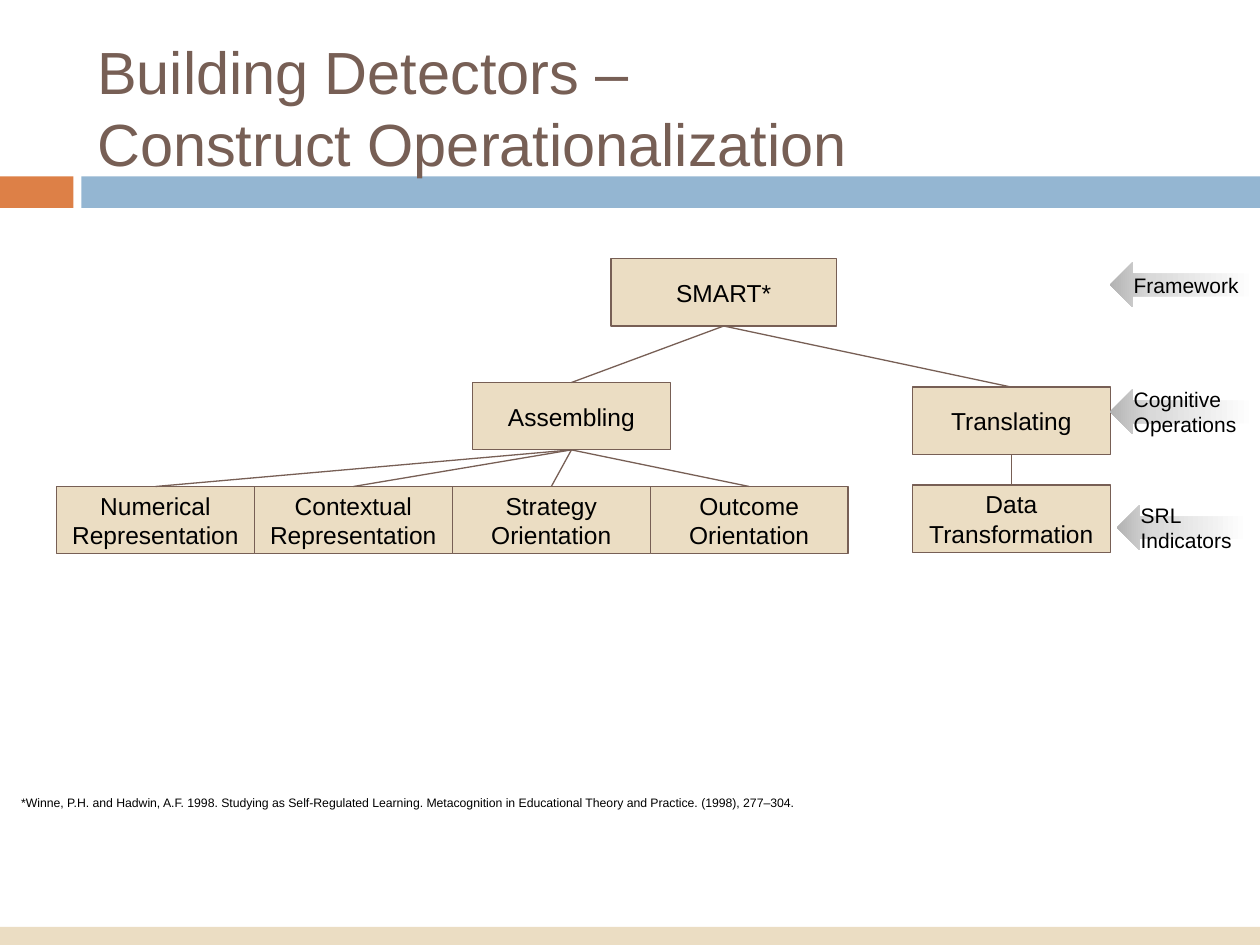
from copy import deepcopy

from lxml import etree
from pptx import Presentation
from pptx.dml.color import RGBColor
from pptx.enum.shapes import MSO_CONNECTOR, MSO_SHAPE
from pptx.enum.text import MSO_ANCHOR, PP_ALIGN
from pptx.oxml.ns import qn
from pptx.util import Pt

RECTANGLE, LEFT_ARROW = MSO_SHAPE.RECTANGLE, MSO_SHAPE.LEFT_ARROW
STRAIGHT = MSO_CONNECTOR.STRAIGHT
TOP, MIDDLE = MSO_ANCHOR.TOP, MSO_ANCHOR.MIDDLE
LEFT, CENTER = PP_ALIGN.LEFT, PP_ALIGN.CENTER

BLACK = RGBColor(0x00, 0x00, 0x00)
BROWN = RGBColor(0x77, 0x5F, 0x55)
SAND = RGBColor(0xEB, 0xDD, 0xC3)
ORANGE = RGBColor(0xDD, 0x80, 0x47)
BLUE = RGBColor(0x94, 0xB6, 0xD2)
ARROW_STOPS = [
    (0, RGBColor(0xFF, 0xFF, 0xFF)),
    (0.72, RGBColor(0xD9, 0xD9, 0xD9)),
    (1, RGBColor(0xB3, 0xB3, 0xB3)),
]
SITE_TOP, SITE_BOTTOM = 0, 2


def write_text(shape, text, size=14, color=BLACK, align=LEFT, anchor=MIDDLE,
               line_spacing=None, top_inset=7.2):
    frame = shape.text_frame
    frame.word_wrap = True
    frame.vertical_anchor = anchor
    frame.margin_left = frame.margin_right = frame.margin_bottom = Pt(7.2)
    frame.margin_top = Pt(top_inset)
    paragraph = frame.paragraphs[0]
    paragraph.text = text
    paragraph.alignment = align
    paragraph.line_spacing = line_spacing
    for run in paragraph.runs:
        run.font.name = "Arial"
        run.font.size = Pt(size)
        run.font.color.rgb = color


def add_block(kind, left, top, width, height, fill=None):
    """Add a shape without shadow or outline."""
    shape = slide.shapes.add_shape(kind, Pt(left), Pt(top), Pt(width), Pt(height))
    shape.shadow.inherit = False
    shape.line.fill.background()
    if fill is not None:
        shape.fill.solid()
        shape.fill.fore_color.rgb = fill
    return shape


presentation = Presentation()
presentation.slide_width, presentation.slide_height = Pt(720), Pt(540)
slide = presentation.slides.add_slide(presentation.slide_layouts[6])

# Bands
add_block(RECTANGLE, 0, 100.8, 42, 18, ORANGE)
add_block(RECTANGLE, 46.5, 100.8, 673.5, 18, BLUE)
add_block(RECTANGLE, 0, 529.7, 720, 10.3, SAND)

# Title and citation
title = slide.shapes.add_textbox(Pt(48.5), Pt(12.2), Pt(648), Pt(90))
write_text(title, "Building Detectors – \vConstruct Operationalization", size=34,
           color=BROWN, anchor=TOP, line_spacing=Pt(40.6), top_inset=8.3)
citation = slide.shapes.add_textbox(Pt(5), Pt(448.5), Pt(516), Pt(24.5))
write_text(citation, "*Winne, P.H. and Hadwin, A.F. 1998. Studying as Self-Regulated "
           "Learning. Metacognition in Educational Theory and Practice. (1998), 277–304.",
           size=7, anchor=TOP, line_spacing=1.15)

# Tree: text, left, top, width, parent
BOX_WIDTH, BOX_HEIGHT = 113.1, 38.5
ASSEMBLING_PARTS = ["Numerical Representation", "Contextual Representation",
                    "Strategy Orientation", "Outcome Orientation"]
nodes = [
    ("SMART*", 349.2, 147.8, 128.7, None),
    ("Assembling", 270, 218.6, BOX_WIDTH, "SMART*"),
    ("Translating", 521.4, 221.2, BOX_WIDTH, "SMART*"),
]
nodes += [(text, 32.3 + column * BOX_WIDTH, 278, BOX_WIDTH, "Assembling")
          for column, text in enumerate(ASSEMBLING_PARTS)]
nodes.append(("Data Transformation", 521.4, 277.2, BOX_WIDTH, "Translating"))

boxes = {}
for text, left, top, width, parent in nodes:
    box = add_block(RECTANGLE, left, top, width, BOX_HEIGHT, SAND)
    box.line.color.rgb = BROWN
    box.line.width = Pt(0.75)
    write_text(box, text, align=CENTER)
    boxes[text] = box

for text, left, top, width, parent in nodes:
    if parent is None:
        continue
    connector = slide.shapes.add_connector(STRAIGHT, 0, 0, 0, 0)
    connector.begin_connect(boxes[parent], SITE_BOTTOM)
    connector.end_connect(boxes[text], SITE_TOP)
    connector.line.color.rgb = BROWN
    connector.line.width = Pt(0.75)
    etree.SubElement(connector.element.spPr, qn("a:effectLst"))

# Level labels
for text, left, top, width in [
    ("Framework", 634.3, 149.9, 82.8),
    ("Cognitive Operations", 634.3, 222.5, 82.8),
    ("SRL Indicators", 638.3, 288.6, 74.9),
]:
    arrow = add_block(LEFT_ARROW, left, top, width, 25.8)
    arrow.fill.gradient()
    arrow.fill.gradient_angle = 180
    stop_list = arrow.element.spPr.find(qn("a:gradFill")).find(qn("a:gsLst"))
    stop_list.append(deepcopy(stop_list[-1]))
    for stop, (position, color) in zip(arrow.fill.gradient_stops, ARROW_STOPS):
        stop.position = position
        stop.color.rgb = color
    write_text(arrow, text, size=12)

presentation.save("out.pptx")
